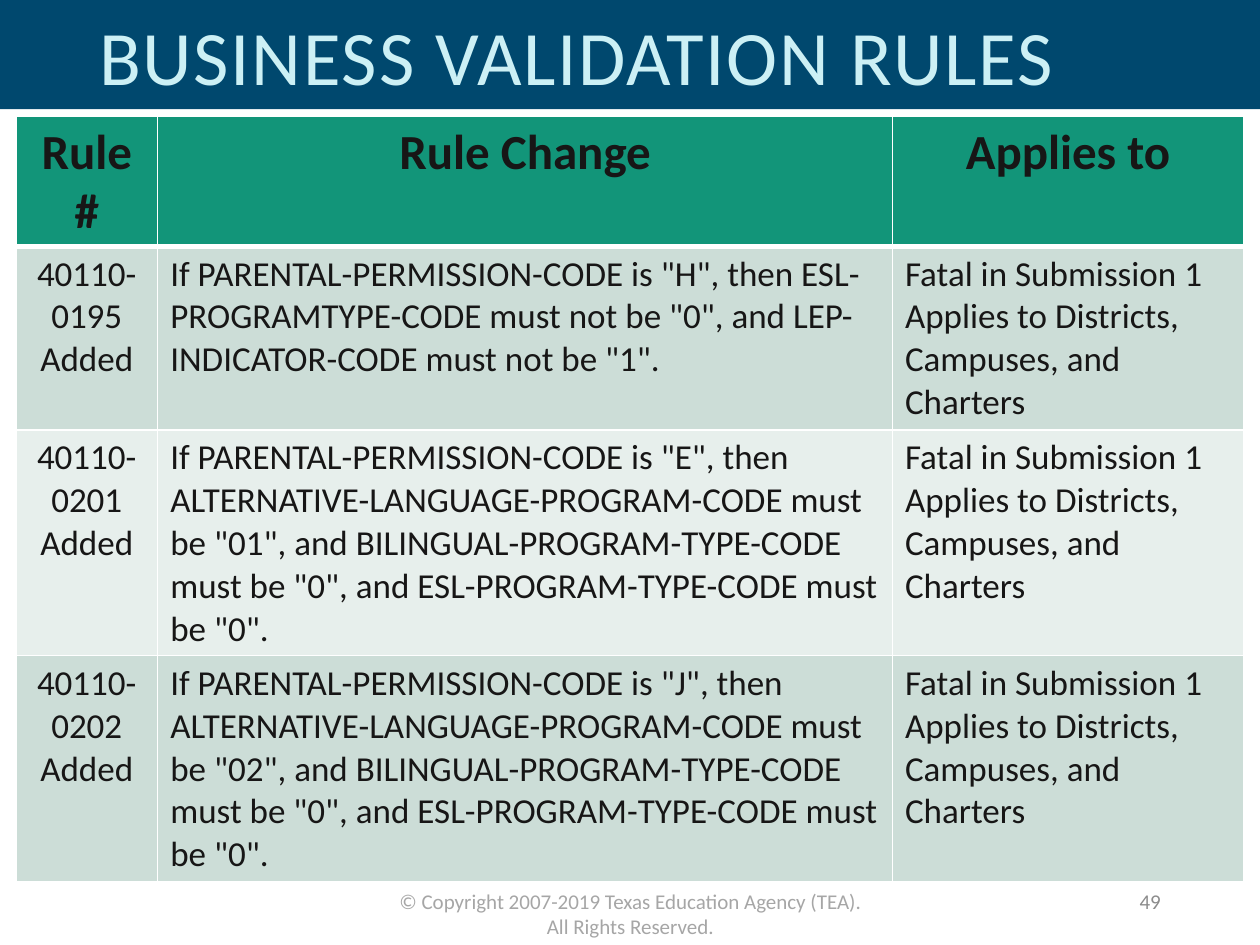
from dataclasses import dataclass

from lxml.etree import SubElement
from pptx import Presentation
from pptx.dml.color import RGBColor
from pptx.enum.shapes import MSO_SHAPE
from pptx.enum.text import MSO_ANCHOR, PP_ALIGN
from pptx.oxml.ns import qn
from pptx.slide import Slide
from pptx.table import _Cell
from pptx.text.text import TextFrame
from pptx.util import Cm, Pt


@dataclass(frozen=True)
class Theme:
    font: str = "Calibri"
    banner: str = "00486E"
    title: str = "CCF0F5"
    ink: str = "171616"
    header: str = "129579"
    bands: tuple[str, str] = ("CCDDD7", "E7EFEC")
    border: str = "FFFFFF"
    copyright: str = "A6A6A6"
    number: str = "8C8C8C"
    title_size: int = 44
    header_size: int = 28
    body_size: int = 20
    footer_size: int = 12
    thin_border: int = 1
    thick_border: int = 3


@dataclass(frozen=True)
class TextStyle:
    size: int
    color: str
    alignment: PP_ALIGN = PP_ALIGN.LEFT
    bold: bool = False
    line_spacing: float = 1.0
    letter_spacing: int = 0


@dataclass(frozen=True)
class Label:
    text: str
    left: float
    top: float
    width: float
    height: float
    style: TextStyle
    anchor: MSO_ANCHOR = MSO_ANCHOR.MIDDLE


@dataclass(frozen=True)
class Rule:
    number: tuple[str, ...]
    change: str
    height: float


THEME = Theme()
HEADER_STYLE = TextStyle(THEME.header_size, THEME.ink, PP_ALIGN.CENTER, bold=True)
NUMBER_STYLE = TextStyle(THEME.body_size, THEME.ink, PP_ALIGN.CENTER)
BODY_STYLE = TextStyle(THEME.body_size, THEME.ink)

LABELS = (
    Label("BUSINESS VALIDATION RULES", 1.75, 0.13, 20.32, 2.2,
          TextStyle(THEME.title_size, THEME.title, line_spacing=0.9, letter_spacing=100)),
    Label("© Copyright 2007-2019 Texas Education Agency (TEA). All Rights Reserved.",
          7.72, 17.78, 9.98, 1.17,
          TextStyle(THEME.footer_size, THEME.copyright, PP_ALIGN.CENTER), MSO_ANCHOR.TOP),
    Label("49", 17.93, 17.65, 5.72, 1.02,
          TextStyle(THEME.footer_size, THEME.number, PP_ALIGN.RIGHT)),
)

TABLE_LEFT, TABLE_TOP = 0.32, 2.34
COLUMN_WIDTHS = (2.86, 14.81, 7.08)
HEADINGS = ("Rule #", "Rule Change", "Applies to")
HEADER_HEIGHT = 2.6
APPLIES_TO = ("Fatal in Submission 1", "Applies to Districts, Campuses, and Charters")
LANGUAGE_RULE = (
    'If PARENTAL-PERMISSION-CODE is "{}", then ALTERNATIVE-LANGUAGE-PROGRAM-CODE '
    'must be "{}", and BILINGUAL-PROGRAM-TYPE-CODE must be "0", and '
    'ESL-PROGRAM-TYPE-CODE must be "0".'
)
RULES = (
    Rule(("40110-0195 Added",),
         'If PARENTAL-PERMISSION-CODE is "H", then ESL-PROGRAMTYPE-CODE must not be "0", '
         'and LEP-INDICATOR-CODE must not be "1".', 3.7),
    Rule(("40110-0201", "Added"), LANGUAGE_RULE.format("E", "01"), 4.55),
    Rule(("40110-0202", "Added"), LANGUAGE_RULE.format("J", "02"), 4.55),
)


def write_text(frame: TextFrame, lines: tuple[str, ...], style: TextStyle) -> None:
    for index, line in enumerate(lines):
        paragraph = frame.add_paragraph() if index else frame.paragraphs[0]
        paragraph.alignment = style.alignment
        paragraph.line_spacing = style.line_spacing
        run = paragraph.add_run()
        run.text = line
        run.font.name = THEME.font
        run.font.size = Pt(style.size)
        run.font.bold = style.bold
        run.font.color.rgb = RGBColor.from_string(style.color)
        if style.letter_spacing:
            run.font._element.set("spc", str(style.letter_spacing))


def draw_banner(slide: Slide) -> None:
    shape = slide.shapes.add_shape(MSO_SHAPE.RECTANGLE, 0, 0, Cm(25.4), Cm(2.2))
    shape.shadow.inherit = False
    shape.fill.solid()
    shape.fill.fore_color.rgb = RGBColor.from_string(THEME.banner)
    shape.line.fill.background()


def draw_label(slide: Slide, label: Label) -> None:
    shape = slide.shapes.add_textbox(
        Cm(label.left), Cm(label.top), Cm(label.width), Cm(label.height))
    frame = shape.text_frame
    frame.word_wrap = True
    frame.vertical_anchor = label.anchor
    write_text(frame, (label.text,), label.style)


def set_borders(cell: _Cell, top: int, bottom: int) -> None:
    properties = cell._tc.get_or_add_tcPr()
    thin = THEME.thin_border
    for side, width in (("L", thin), ("R", thin), ("T", top), ("B", bottom)):
        line = SubElement(properties, qn(f"a:ln{side}"), w=str(Pt(width)))
        fill = SubElement(line, qn("a:solidFill"))
        SubElement(fill, qn("a:srgbClr"), val=THEME.border)


def fill_cell(cell: _Cell, lines: tuple[str, ...], style: TextStyle,
              color: str, top: int, bottom: int) -> None:
    set_borders(cell, top, bottom)
    cell.fill.solid()
    cell.fill.fore_color.rgb = RGBColor.from_string(color)
    write_text(cell.text_frame, lines, style)


def draw_rules(slide: Slide) -> None:
    heights = (HEADER_HEIGHT, *(rule.height for rule in RULES))
    table = slide.shapes.add_table(
        len(heights), len(COLUMN_WIDTHS), Cm(TABLE_LEFT), Cm(TABLE_TOP),
        Cm(sum(COLUMN_WIDTHS)), Cm(sum(heights))).table
    for column, width in zip(table.columns, COLUMN_WIDTHS):
        column.width = Cm(width)
    for row, height in zip(table.rows, heights):
        row.height = Cm(height)
    thin, thick = THEME.thin_border, THEME.thick_border
    for column, heading in enumerate(HEADINGS):
        fill_cell(table.cell(0, column), (heading,), HEADER_STYLE, THEME.header, thin, thick)
    for index, rule in enumerate(RULES):
        color = THEME.bands[index % len(THEME.bands)]
        contents = ((rule.number, NUMBER_STYLE), ((rule.change,), BODY_STYLE),
                    (APPLIES_TO, BODY_STYLE))
        for column, (lines, style) in enumerate(contents):
            fill_cell(table.cell(index + 1, column), lines, style, color,
                      thin if index else thick, thin)


def main() -> None:
    presentation = Presentation()
    presentation.slide_width, presentation.slide_height = Cm(25.4), Cm(19.05)
    slide = presentation.slides.add_slide(presentation.slide_layouts[6])
    draw_banner(slide)
    for label in LABELS:
        draw_label(slide, label)
    draw_rules(slide)
    presentation.save("out.pptx")


if __name__ == "__main__":
    main()
